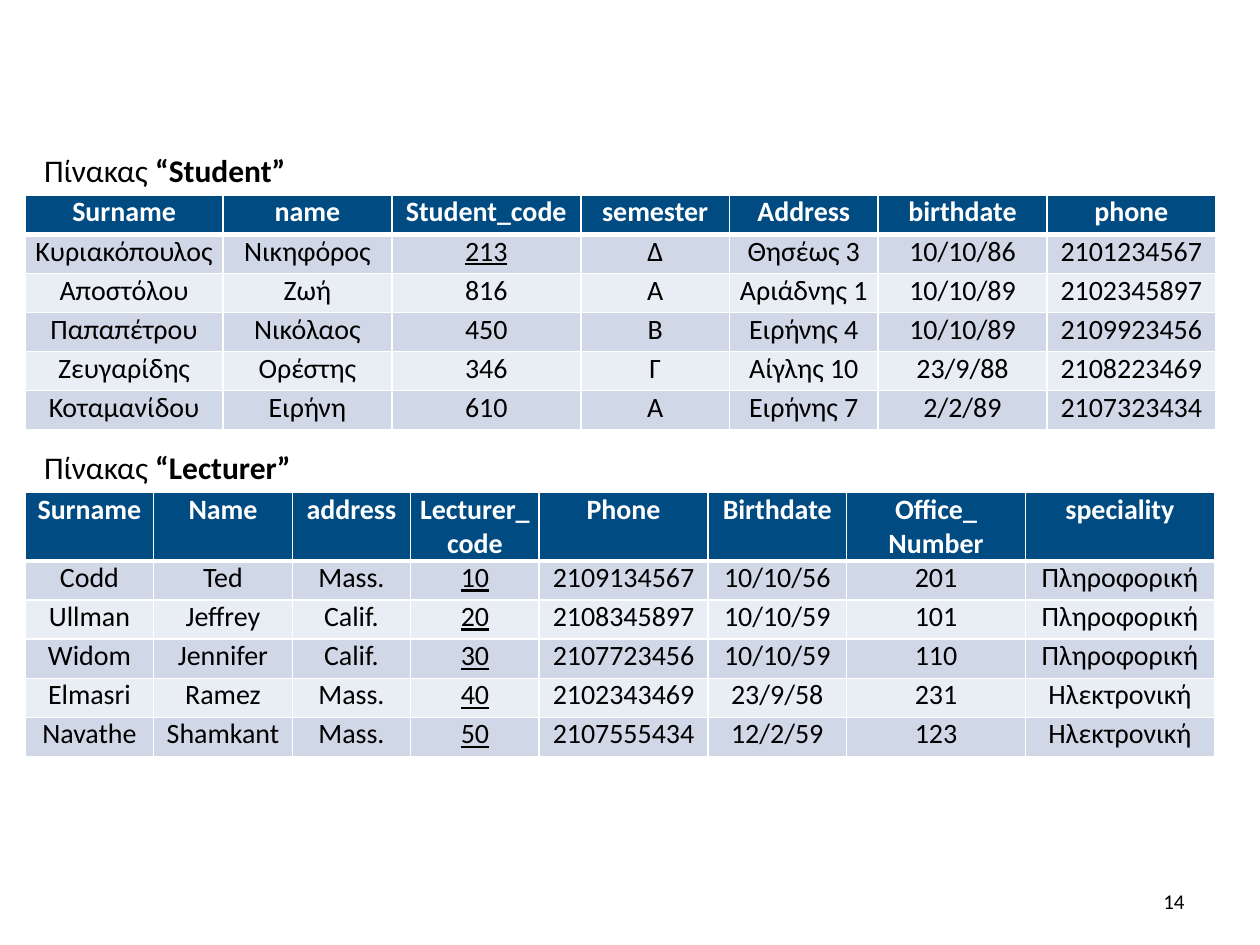
from lxml.etree import SubElement
from pptx import Presentation
from pptx.dml.color import RGBColor
from pptx.enum.text import MSO_ANCHOR as Anchor, MSO_AUTO_SIZE as AutoSize, PP_ALIGN as Align
from pptx.oxml.ns import qn
from pptx.util import Inches, Pt

FONT = "Calibri"
BLACK = RGBColor(0x00, 0x00, 0x00)
WHITE = RGBColor(0xFF, 0xFF, 0xFF)
NAVY = RGBColor(0x00, 0x4B, 0x82)
BANDS = (RGBColor(0xE9, 0xED, 0xF4), RGBColor(0xD0, 0xD8, 0xE8))
ROW_HEIGHT = 0.31

STUDENTS = (
    ("Surname", "name", "Student_code", "semester", "Address", "birthdate", "phone"),
    ("Κυριακόπουλος", "Νικηφόρος", "213", "Δ", "Θησέως 3", "10/10/86", "2101234567"),
    ("Αποστόλου", "Ζωή", "816", "Α", "Αριάδνης 1", "10/10/89", "2102345897"),
    ("Παπαπέτρου", "Νικόλαος", "450", "Β", "Ειρήνης 4", "10/10/89", "2109923456"),
    ("Ζευγαρίδης", "Ορέστης", "346", "Γ", "Αίγλης 10", "23/9/88", "2108223469"),
    ("Κοταμανίδου", "Ειρήνη", "610", "Α", "Ειρήνης 7", "2/2/89", "2107323434"),
)
STUDENT_WIDTHS = (1.57, 1.34, 1.5, 1.18, 1.18, 1.34, 1.34)
STUDENT_KEYS = {(1, 2)}

LECTURERS = (
    ("Surname", "Name", "address", "Lecturer_code", "Phone", "Birthdate",
     "Office_\nNumber", "speciality"),
    ("Codd", "Ted", "Mass.", "10", "2109134567", "10/10/56", "201", "Πληροφορική"),
    ("Ullman", "Jeffrey", "Calif.", "20", "2108345897", "10/10/59", "101", "Πληροφορική"),
    ("Widom", "Jennifer", "Calif.", "30", "2107723456", "10/10/59", "110", "Πληροφορική"),
    ("Elmasri", "Ramez", "Mass.", "40", "2102343469", "23/9/58", "231", "Ηλεκτρονική"),
    ("Navathe", "Shamkant", "Mass.", "50", "2107555434", "12/2/59", "123", "Ηλεκτρονική"),
)
LECTURER_WIDTHS = (1.02, 1.1, 0.94, 1.02, 1.34, 1.1, 1.42, 1.5)
LECTURER_KEYS = {(row, 3) for row in range(1, 6)}


def format_run(span, size, color=BLACK, bold=False):
    """Set the font of one run."""
    font = span.font
    font.name, font.size, font.bold = FONT, Pt(size), bold
    font.color.rgb = color


def add_borders(cell, top, bottom):
    """Draw white borders around a cell, with widths in points."""
    properties = cell._tc.get_or_add_tcPr()
    for side, width in (("L", 1), ("R", 1), ("T", top), ("B", bottom)):
        line = SubElement(properties, qn(f"a:ln{side}"), w=str(Pt(width)))
        fill = SubElement(line, qn("a:solidFill"))
        SubElement(fill, qn("a:srgbClr"), val=str(WHITE))


def fill_cell(cell, text, row, underlined):
    """Write and style one cell according to its row."""
    header = row == 0
    add_borders(cell, 3 if row == 1 else 1, 3 if header else 1)
    cell.fill.solid()
    cell.fill.fore_color.rgb = NAVY if header else BANDS[row % 2]
    cell.margin_left = cell.margin_right = Inches(0.07)
    cell.margin_top = cell.margin_bottom = 0
    cell.text_frame.text = text
    for para in cell.text_frame.paragraphs:
        para.alignment = Align.CENTER
        for span in para.runs:
            format_run(span, 16, WHITE if header else BLACK, header)
            if underlined:
                span.font.underline = True


def add_relation(page, left, top, records, widths, header_height, keys):
    """Place a relation as a table with its key cells underlined."""
    heights = [header_height] + [ROW_HEIGHT] * (len(records) - 1)
    frame = page.shapes.add_table(
        len(records), len(widths), Inches(left), Inches(top),
        Inches(sum(widths)), Inches(sum(heights)))
    table = frame.table
    for column, width in zip(table.columns, widths):
        column.width = Inches(width)
    for table_row, height in zip(table.rows, heights):
        table_row.height = Inches(height)
    for row, record in enumerate(records):
        for col, text in enumerate(record):
            fill_cell(table.cell(row, col), text, row, (row, col) in keys)


def add_caption(page, left, top, width, name):
    """Place the caption above a table, with the table name in bold."""
    box = page.shapes.add_textbox(Inches(left), Inches(top), Inches(width), Inches(0.4))
    frame = box.text_frame
    frame.word_wrap = False
    frame.auto_size = AutoSize.SHAPE_TO_FIT_TEXT
    frame.margin_left = Inches(0.15)
    para = frame.paragraphs[0]
    for text, bold in (("Πίνακας ", False), (f"“{name}”", True)):
        span = para.add_run()
        span.text = text
        format_run(span, 18, bold=bold)


def add_page_number(page, left, top, width, height, number):
    """Place the right-aligned page number."""
    box = page.shapes.add_textbox(Inches(left), Inches(top), Inches(width), Inches(height))
    frame = box.text_frame
    frame.word_wrap = True
    frame.vertical_anchor = Anchor.MIDDLE
    frame.text = number
    para = frame.paragraphs[0]
    para.alignment = Align.RIGHT
    format_run(para.runs[0], 12)


def main():
    """Build the slide with both relations and save it."""
    deck = Presentation()
    deck.slide_width, deck.slide_height = Inches(10), Inches(7.5)
    page = deck.slides.add_slide(deck.slide_layouts[6])
    add_relation(page, 0.2, 1.55, STUDENTS, STUDENT_WIDTHS, ROW_HEIGHT, STUDENT_KEYS)
    add_relation(page, 0.2, 3.91, LECTURERS, LECTURER_WIDTHS, 0.54, LECTURER_KEYS)
    add_caption(page, 0.2, 3.51, 2.39, "Lecturer")
    add_caption(page, 0.2, 1.15, 2.26, "Student")
    add_page_number(page, 7.17, 6.95, 2.33, 0.4, "14")
    deck.save("out.pptx")


if __name__ == "__main__":
    main()
